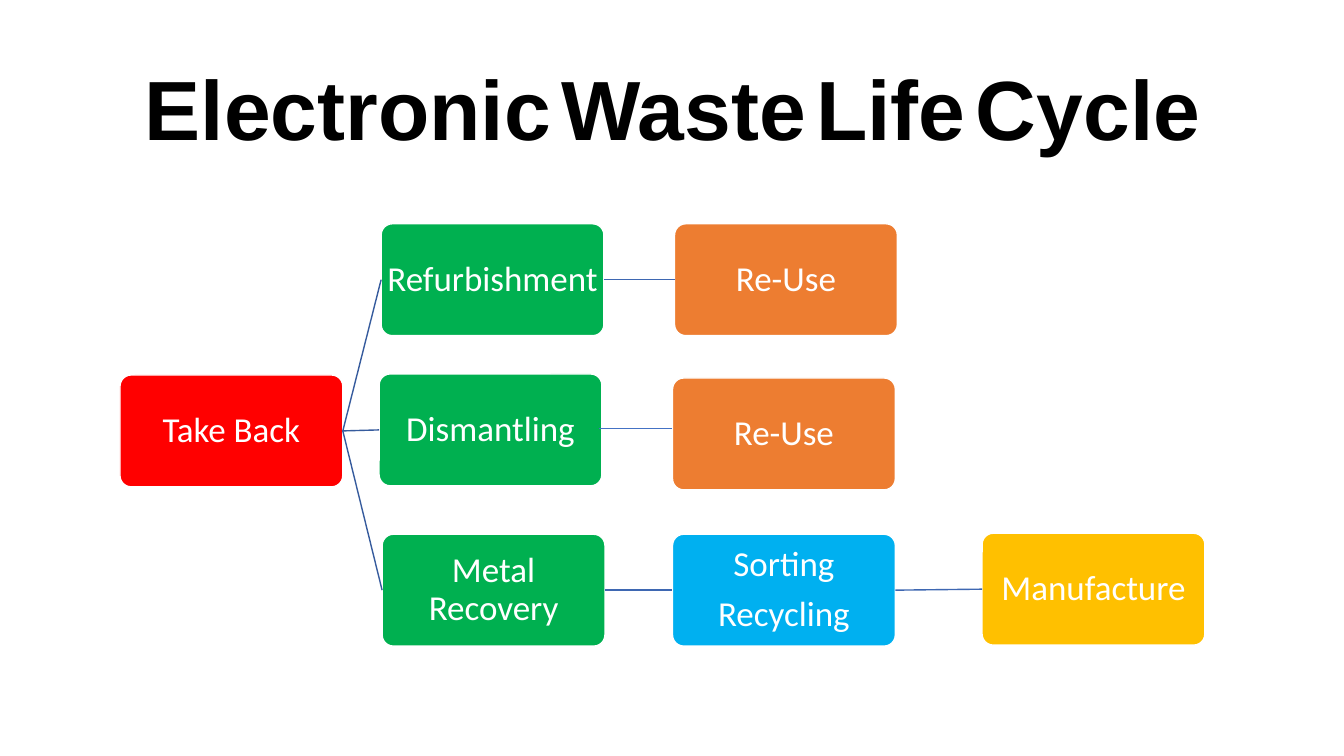
from pptx import Presentation
from pptx.dml.color import RGBColor
from pptx.enum.shapes import MSO_CONNECTOR as Connector, MSO_SHAPE as Shape
from pptx.enum.text import MSO_ANCHOR as Anchor, PP_ALIGN as Align
from pptx.oxml.ns import qn
from pptx.util import Inches, Pt
from lxml.etree import SubElement

COLORS = {
    "white": "FFFFFF", "black": "000000", "slate": "44546A",
    "red": "FF0000", "green": "00B050", "orange": "ED7D31",
    "sky": "00B0F0", "gold": "FFC000",
    "branch": "365B9D", "step": "3E67B2", "thin": "4472C4",
}
BOX_WIDTH, BOX_HEIGHT = 2.21, 1.11
LEFT_SIDE, RIGHT_SIDE = 1, 3  # connection sites of a rounded rectangle

# name: (left, top, fill, lines of text)
STAGES = {
    "take back": (1.19, 3.72, "red", ["Take Back"]),
    "refurbishment": (3.78, 2.22, "green", ["Refurbishment"]),
    "refurbished use": (6.69, 2.22, "orange", ["Re-Use"]),
    "metal recovery": (3.79, 5.3, "green", ["Metal Recovery"]),
    "sorting": (6.67, 5.3, "sky", ["Sorting", "Recycling"]),
    "manufacture": (9.74, 5.29, "gold", ["Manufacture"]),
    "dismantling": (3.76, 3.71, "green", ["Dismantling"]),
    "dismantled use": (6.67, 3.75, "orange", ["Re-Use"]),
}
LINKS = [
    ("take back", "refurbishment", "branch"),
    ("take back", "dismantling", "branch"),
    ("take back", "metal recovery", "branch"),
    ("refurbishment", "refurbished use", "step"),
    ("metal recovery", "sorting", "step"),
    ("sorting", "manufacture", "step"),
]


def color(name):
    return RGBColor.from_string(COLORS[name])


class FlowSlide:
    """Holds the slide and the style of its elements."""

    label_font, label_size = "Calibri", Pt(25)

    def __init__(self, deck):
        self.page = deck.slides.add_slide(deck.slide_layouts[5])

    def title(self, text):
        box = self.page.shapes.title
        box.left, box.top = Inches(0.92), Inches(0.4)
        box.width, box.height = Inches(11.5), Inches(1.45)
        box.text_frame.vertical_anchor = Anchor.MIDDLE
        box.text_frame.word_wrap = True
        para = box.text_frame.paragraphs[0]
        para.alignment, para.line_spacing = Align.CENTER, 0.9
        para.font.bold = True
        for index, word in enumerate(text.split()):
            if index:
                gap = self.title_span(para, " ", "Manrope", 37, "slate")
                gap.font._element.set("spc", "-140")
            self.title_span(para, word, "Arial", 60, "black")

    def title_span(self, para, text, font, size, tint):
        span = para.add_run()
        span.text = text
        span.font.name, span.font.size = font, Pt(size)
        span.font.color.rgb = color(tint)
        return span

    def stage(self, left, top, fill, lines):
        box = self.page.shapes.add_shape(
            Shape.ROUNDED_RECTANGLE, Inches(left), Inches(top),
            Inches(BOX_WIDTH), Inches(BOX_HEIGHT))
        box.adjustments[0] = 0.1
        box.shadow.inherit = False
        box.fill.solid()
        box.fill.fore_color.rgb = color(fill)
        box.line.color.rgb = color("white")
        box.line.width = Pt(1)
        frame = box.text_frame
        frame.word_wrap = True
        frame.vertical_anchor = Anchor.MIDDLE
        frame.margin_left = frame.margin_right = Inches(0.02)
        frame.margin_top = frame.margin_bottom = Inches(0.02)
        frame.text = "\n".join(lines)
        for para in frame.paragraphs:
            para.alignment, para.line_spacing = Align.CENTER, 0.9
            para.space_after = Pt(8.75)
            para.font.name, para.font.size = self.label_font, self.label_size
            para.font.color.rgb = color("white")
        return box

    def line(self, start, end, tint, width):
        line = self.page.shapes.add_connector(
            Connector.STRAIGHT, *map(Inches, start + end))
        line.line.color.rgb = color(tint)
        line.line.width = Pt(width)
        SubElement(line._element.spPr, qn("a:effectLst"))
        return line

    def link(self, source, target, tint):
        line = self.line((0, 0), (1, 1), tint, 1)
        line.begin_connect(source, RIGHT_SIDE)
        line.end_connect(target, LEFT_SIDE)


def main():
    deck = Presentation()
    deck.slide_width, deck.slide_height = Inches(13.33), Inches(7.5)
    flow = FlowSlide(deck)
    flow.title("Electronic Waste Life Cycle")

    # Stages and the links between them
    boxes = {name: flow.stage(*stage) for name, stage in STAGES.items()}
    for source, target, tint in LINKS:
        flow.link(boxes[source], boxes[target], tint)

    # Level line from dismantling to its re-use
    flow.line((5.94, 4.25), (6.67, 4.25), "thin", 0.5)

    deck.save("out.pptx")


if __name__ == "__main__":
    main()
